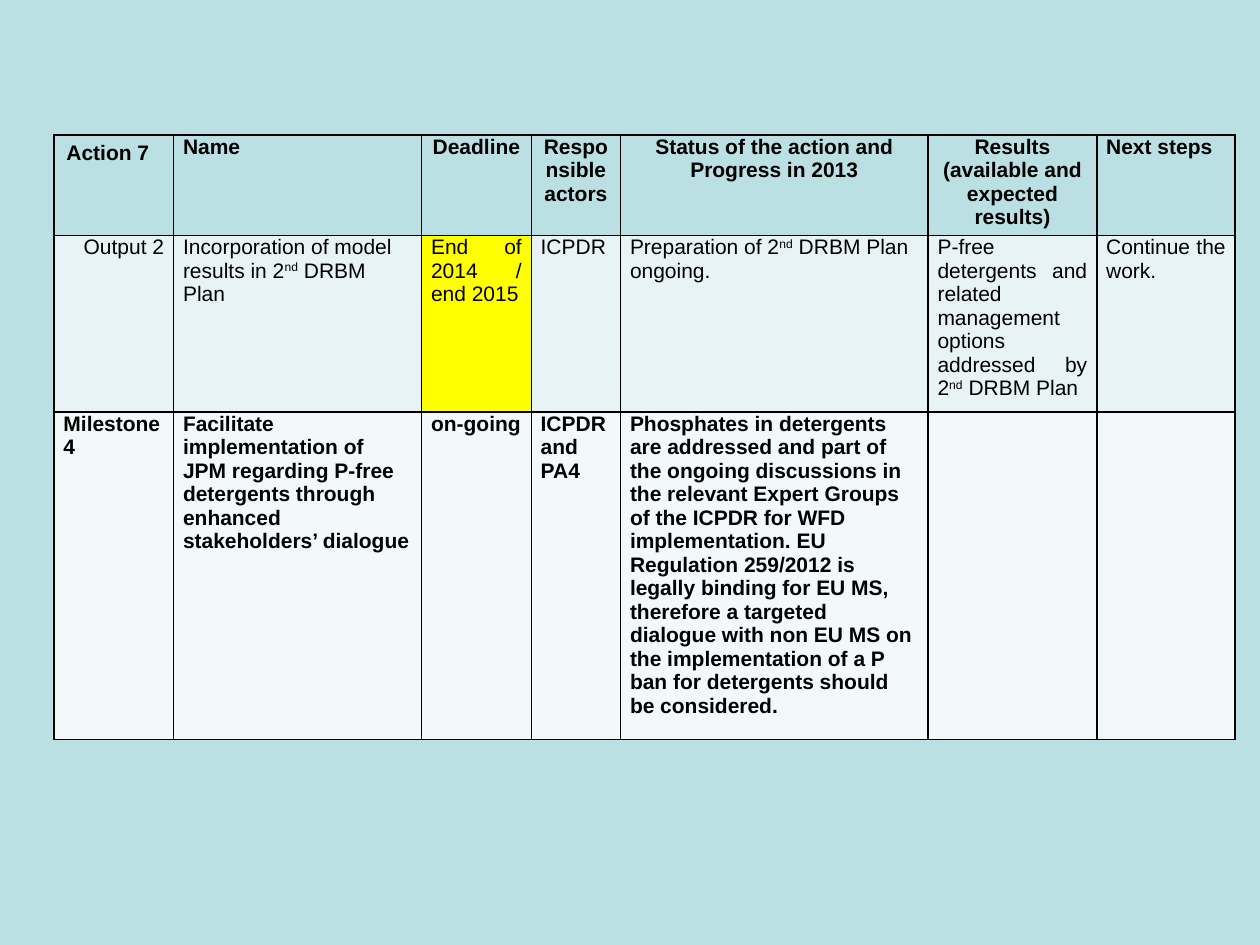
from pptx import Presentation
from pptx.dml.color import RGBColor
from pptx.enum.text import PP_ALIGN as Align
from pptx.oxml.ns import qn
from pptx.util import Cm, Pt
from lxml.etree import SubElement

BLACK = RGBColor(0x00, 0x00, 0x00)
HEADER = RGBColor(0xBB, 0xE0, 0xE3)
OUTPUT = RGBColor(0xE7, 0xF3, 0xF4)
MILESTONE = RGBColor(0xF3, 0xF9, 0xFA)
YELLOW = RGBColor(0xFF, 0xFF, 0x00)

L, C, R, J = Align.LEFT, Align.CENTER, Align.RIGHT, Align.JUSTIFY
COLUMN_WIDTHS = [2.41, 5, 2.21, 1.8, 6.2, 3.4, 2.79]
ROW_HEIGHTS = [2.03, 3.56, 6.6]
ROW_FILLS = [HEADER, OUTPUT, MILESTONE]
ROW_BOLD = [True, False, True]
SUPERSCRIPT = "nd"
ROWS = [
    [
        (L, ["Action 7"]),
        (J, ["Name"]),
        (C, ["Deadline"]),
        (C, ["Responsible actors"]),
        (C, ["Status of the action and Progress in 2013"]),
        (C, ["Results (available and expected results)"]),
        (J, ["Next steps"]),
    ],
    [
        (R, ["Output 2"]),
        (L, ["Incorporation of model results in 2", SUPERSCRIPT, " DRBM Plan"]),
        (J, ["End of 2014 / end 2015"]),
        (J, ["ICPDR"]),
        (L, ["Preparation of 2", SUPERSCRIPT, " DRBM Plan ongoing."]),
        (J, ["P-free detergents and related management options addressed by 2",
             SUPERSCRIPT, " DRBM Plan"]),
        (J, ["Continue the work."]),
    ],
    [
        (J, ["Milestone 4"]),
        (L, ["Facilitate implementation of JPM regarding P-free detergents "
             "through enhanced stakeholders’ dialogue"]),
        (J, ["on-going"]),
        (J, ["ICPDR and PA4"]),
        (L, ["Phosphates in detergents are addressed and part of the ongoing "
             "discussions in the relevant Expert Groups of the ICPDR for WFD "
             "implementation. EU Regulation 259/2012 is legally binding for EU "
             "MS, therefore a targeted dialogue with non EU MS on the "
             "implementation of a P ban for detergents should be considered."]),
        (L, []),
        (L, []),
    ],
]


def set_borders(cell):
    """Draw a thin black line on all four sides of a cell."""
    tc_pr = cell._tc.get_or_add_tcPr()
    for side in ("a:lnL", "a:lnR", "a:lnT", "a:lnB"):
        ln = SubElement(tc_pr, qn(side), w=str(Pt(1)))
        fill = SubElement(ln, qn("a:solidFill"))
        SubElement(fill, qn("a:srgbClr"), val=str(BLACK))


def set_margins(cell, side, top):
    """Set equal left and right, and equal top and bottom margins."""
    cell.margin_left = cell.margin_right = Cm(side)
    cell.margin_top = cell.margin_bottom = Cm(top)


def write_text(cell, align, texts, bold):
    """Write the runs of a cell's paragraph, raising ordinal endings."""
    p = cell.text_frame.paragraphs[0]
    p.alignment = align
    p.space_after = Pt(12)
    p.font.size = Pt(12)
    for text in texts:
        r = p.add_run()
        r.text = text
        r.font.name = "Arial"
        r.font.size = Pt(12)
        r.font.bold = bold
        r.font.color.rgb = BLACK
        if text == SUPERSCRIPT:
            r._r.get_or_add_rPr().set("baseline", "30000")


def style_cell(cell, color):
    """Give a cell its borders, margins and fill."""
    set_borders(cell)
    set_margins(cell, 0.19, 0)
    cell.fill.solid()
    cell.fill.fore_color.rgb = color


def add_action_table(s):
    """Add the table of outputs and milestones."""
    frame = s.shapes.add_table(len(ROWS), len(COLUMN_WIDTHS), Cm(1.09), Cm(2.72),
                               Cm(sum(COLUMN_WIDTHS)), Cm(sum(ROW_HEIGHTS)))
    table = frame.table
    table.first_row = table.horz_banding = False
    for column, width in zip(table.columns, COLUMN_WIDTHS):
        column.width = Cm(width)
    for row, height, contents, color, bold in zip(
            table.rows, ROW_HEIGHTS, ROWS, ROW_FILLS, ROW_BOLD):
        row.height = Cm(height)
        for cell, (align, texts) in zip(row.cells, contents):
            style_cell(cell, color)
            write_text(cell, align, texts, bold)
    action = table.cell(0, 0)
    set_margins(action, 0.25, 0.13)
    action.text_frame.paragraphs[0].space_after = Pt(0)
    table.cell(1, 2).fill.fore_color.rgb = YELLOW


def main():
    """Build the slide and save it."""
    prs = Presentation()
    prs.slide_width, prs.slide_height = Cm(25.4), Cm(19.05)
    s = prs.slides.add_slide(prs.slide_layouts[6])
    s.background.fill.solid()
    s.background.fill.fore_color.rgb = HEADER
    add_action_table(s)
    prs.save("out.pptx")


if __name__ == "__main__":
    main()
